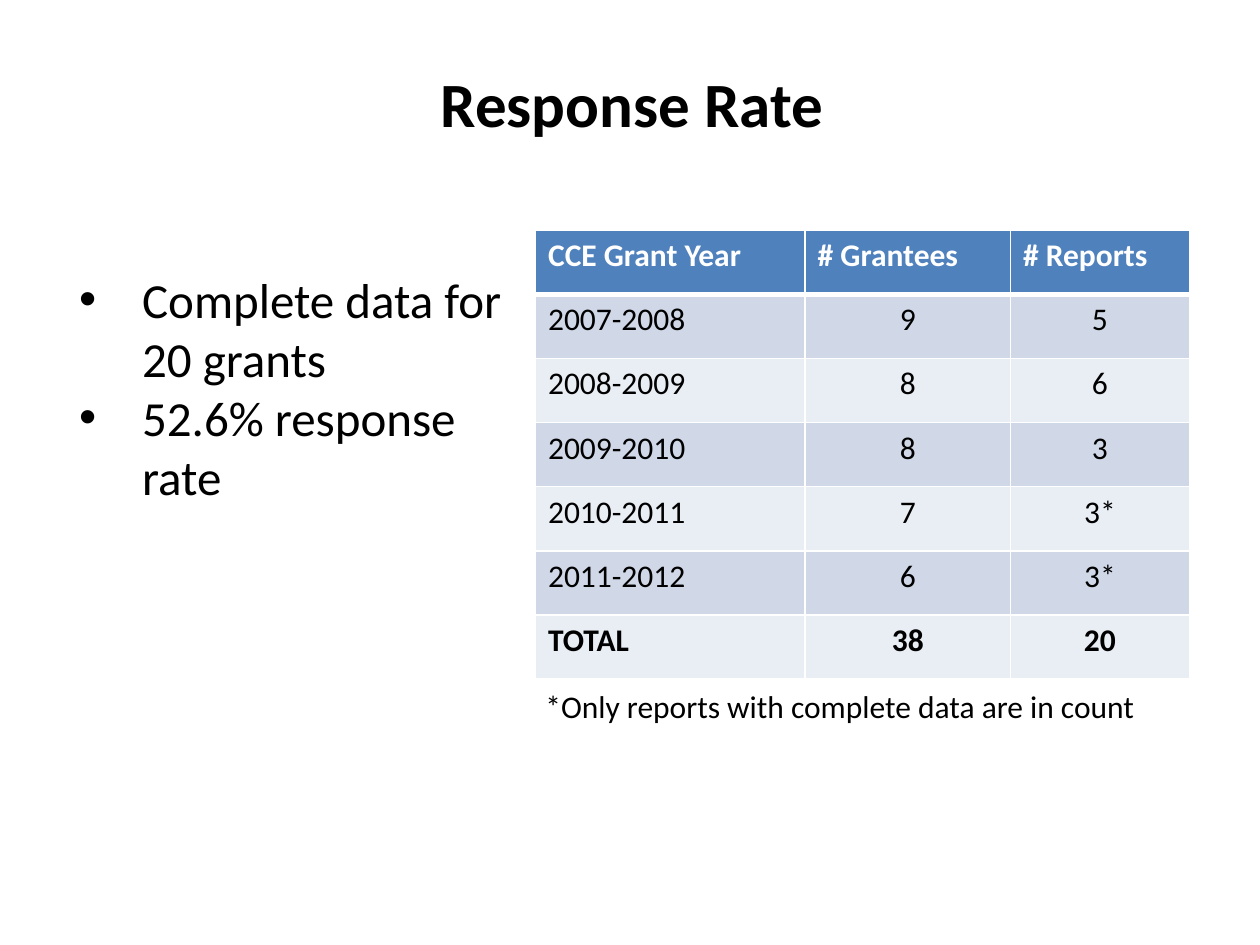
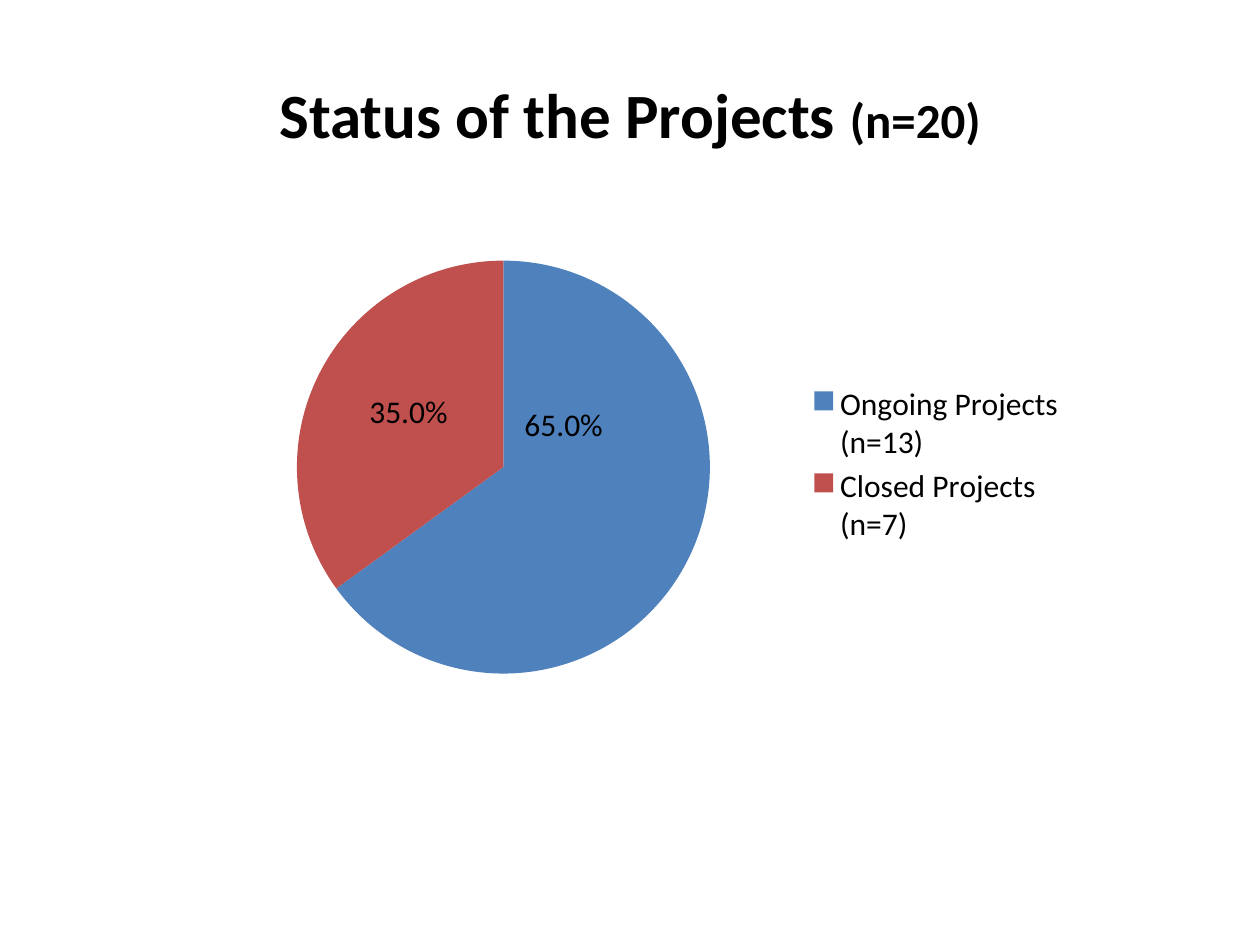
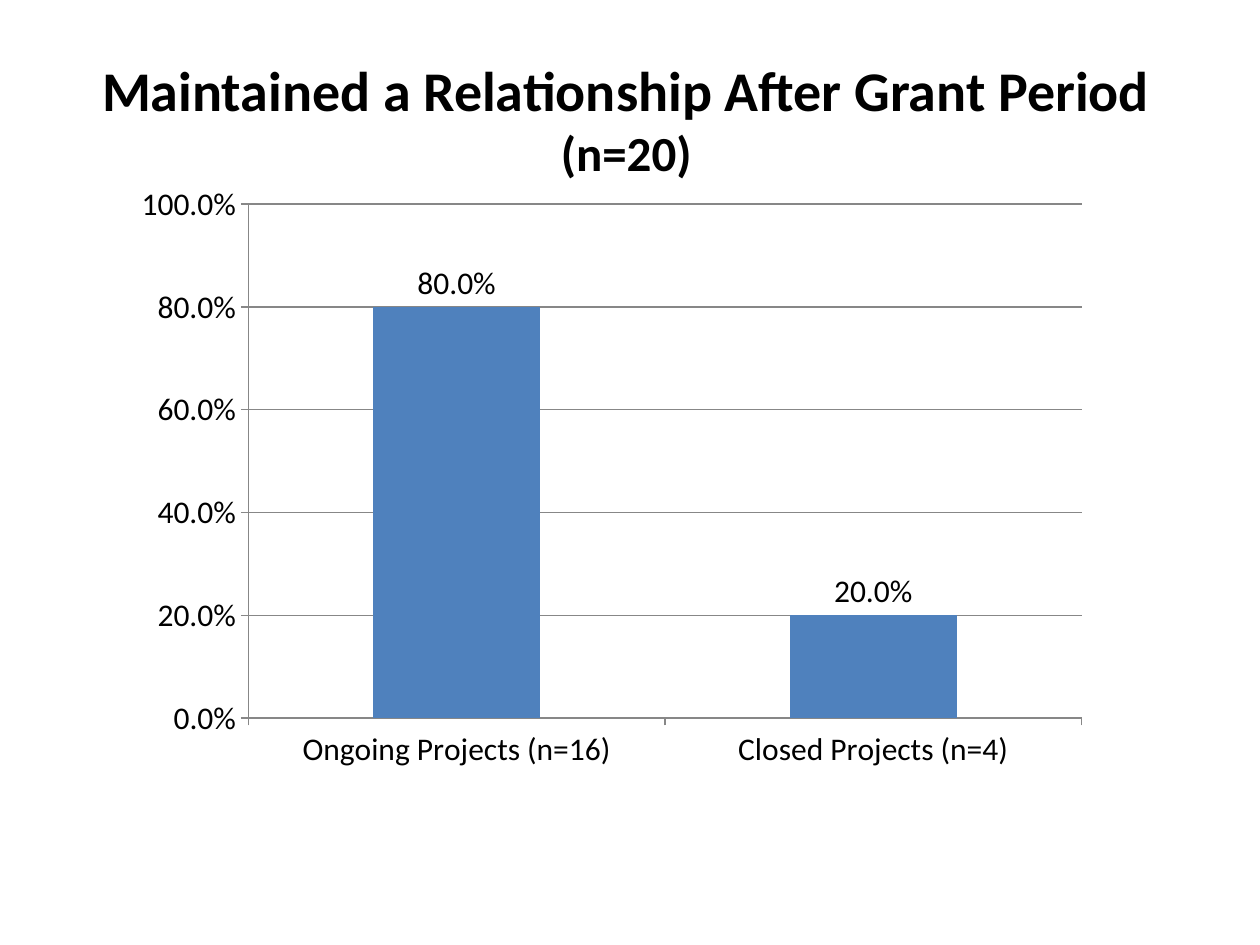
from lxml import etree
from pptx import Presentation
from pptx.chart.data import CategoryChartData
from pptx.dml.color import RGBColor
from pptx.enum.chart import XL_CHART_TYPE, XL_LABEL_POSITION, XL_LEGEND_POSITION, XL_TICK_MARK
from pptx.enum.text import MSO_ANCHOR, MSO_AUTO_SIZE, PP_ALIGN
from pptx.oxml.ns import qn
from pptx.util import Inches, Pt

PIE = XL_CHART_TYPE.PIE
COLUMN = XL_CHART_TYPE.COLUMN_CLUSTERED
INSIDE_END = XL_LABEL_POSITION.INSIDE_END
OUTSIDE_END = XL_LABEL_POSITION.OUTSIDE_END
RIGHT = XL_LEGEND_POSITION.RIGHT
TICK_OUT = XL_TICK_MARK.OUTSIDE
TOP = MSO_ANCHOR.TOP
NO_FIT = MSO_AUTO_SIZE.NONE
CENTER = PP_ALIGN.CENTER
LEFT = PP_ALIGN.LEFT

FONT = "Calibri"
BLACK, WHITE, GREY = "000000", "FFFFFF", "878787"
BLUE, RED = "4F81BD", "C0504D"
BANDS = ["E9EDF4", "D0D8E8"]
PERCENT = "0.0%"


def add_run(p, text, size, color=BLACK, bold=False):
    r = p.add_run()
    r.text = text
    r.font.name = FONT
    r.font.size = Pt(size)
    r.font.bold = bold
    r.font.color.rgb = RGBColor.from_string(color)


def set_layout(parent, index, **settings):
    for old in parent.findall(qn("c:layout")):
        parent.remove(old)
    layout = etree.Element(qn("c:layout"))
    manual = etree.SubElement(layout, qn("c:manualLayout"))
    for key, val in settings.items():
        etree.SubElement(manual, qn(f"c:{key}")).set("val", str(val))
    parent.insert(index, layout)


prs = Presentation()
prs.slide_width = Inches(10)
prs.slide_height = Inches(7.5)

titles = [
    ((0.38, 0.46, 9.27, 1.05), [("Response Rate", 36)]),
    ((0.75, 0.55, 8.5, 1.05), [("Status of the Projects ", 36), ("(n=20)", 28)]),
    ((0.34, 0.39, 9.26, 1.05), [("Maintained a Relationship After Grant Period ", 32), ("(n=20)", 28)]),
]
slides = []
for box, runs in titles:
    s = prs.slides.add_slide(prs.slide_layouts[5])
    slides.append(s)
    sp = s.shapes.title
    sp.left, sp.top, sp.width, sp.height = [Inches(v) for v in box]
    tf = sp.text_frame
    tf.auto_size = NO_FIT
    tf.word_wrap = True
    tf.vertical_anchor = TOP
    p = tf.paragraphs[0]
    p.alignment = CENTER
    for text, size in runs:
        add_run(p, text, size, bold=True)

response, status, relationship = slides

bodies = [
    ((0.53, 2.09, 3.59, 3.14), 28, True, ["Complete data for 20 grants", "52.6% response rate"]),
    ((4.23, 5.4, 5.21, 0.59), 18, False, ["*Only reports with complete data are in count"]),
]
for box, size, bulleted, lines in bodies:
    tf = response.shapes.add_textbox(*[Inches(v) for v in box]).text_frame
    tf.word_wrap = True
    for i, line in enumerate(lines):
        p = tf.add_paragraph() if i else tf.paragraphs[0]
        if bulleted:
            pPr = p._p.get_or_add_pPr()
            pPr.set("marL", str(Inches(0.5)))
            pPr.set("indent", str(-Inches(0.5)))
            etree.SubElement(pPr, qn("a:buFont")).set("typeface", "Arial")
            etree.SubElement(pPr, qn("a:buChar")).set("char", "•")
        add_run(p, line, size)

rows = [
    ("CCE Grant Year", "# Grantees", "# Reports"),
    ("2007-2008", "9", "5"),
    ("2008-2009", "8", "6"),
    ("2009-2010", "8", "3"),
    ("2010-2011", "7", "3*"),
    ("2011-2012", "6", "3*"),
    ("TOTAL", "38", "20"),
]
widths = [2.14, 1.63, 1.42]
table = response.shapes.add_table(
    len(rows), len(widths), Inches(4.25), Inches(1.83), Inches(sum(widths)), Inches(3.56)
).table
for col, width in zip(table.columns, widths):
    col.width = Inches(width)
for i, row in enumerate(rows):
    header = i == 0
    for j, text in enumerate(row):
        cell = table.cell(i, j)
        p = cell.text_frame.paragraphs[0]
        p.alignment = LEFT if header or j == 0 else CENTER
        add_run(p, text, 18, WHITE if header else BLACK, header or row[0] == "TOTAL")
        tcPr = cell._tc.get_or_add_tcPr()
        for side in ("lnL", "lnR", "lnT", "lnB"):
            thick = (header and side == "lnB") or (i == 1 and side == "lnT")
            ln = etree.SubElement(tcPr, qn(f"a:{side}"), w=str(Pt(3 if thick else 1)))
            fill = etree.SubElement(ln, qn("a:solidFill"))
            etree.SubElement(fill, qn("a:srgbClr"), val=WHITE)
        cell.fill.solid()
        cell.fill.fore_color.rgb = RGBColor.from_string(BLUE if header else BANDS[i % 2])

specs = [
    (status, PIE, (1.66, 1.44, 6.87, 4.49), (0.1, 0.14, 0.48, 0.73), INSIDE_END,
     [("Ongoing Projects (n=13)", 0.65), ("Closed Projects (n=7)", 0.35)]),
    (relationship, COLUMN, (0.96, 1.38, 7.78, 4.8), (0.13, 0.05, 0.85, 0.85), OUTSIDE_END,
     [("Ongoing Projects (n=16)", 0.8), ("Closed Projects (n=4)", 0.2)]),
]
charts = []
for s, kind, box, area, position, values in specs:
    data = CategoryChartData(number_format=PERCENT)
    data.categories = [name for name, _ in values]
    data.add_series("Series 1", [value for _, value in values])
    chart = s.shapes.add_chart(kind, *[Inches(v) for v in box], data).chart
    charts.append(chart)
    chart.has_title = False
    chart.has_legend = kind == PIE
    chart.font.name = FONT
    chart.font.size = Pt(18)
    chart.font.color.rgb = RGBColor.from_string(BLACK)
    plot = chart.plots[0]
    plot.vary_by_categories = kind == PIE
    labels = plot.series[0].data_labels
    labels.show_value = True
    labels.number_format = PERCENT
    labels.number_format_is_linked = False
    labels.position = position
    x, y, w, h = area
    set_layout(chart._chartSpace.chart.plotArea, 0, layoutTarget="inner",
               xMode="edge", yMode="edge", x=x, y=y, w=w, h=h)

pie, column = charts
pie.legend.position = RIGHT
pie.legend.include_in_layout = False
set_layout(pie.legend._element, 1, xMode="edge", yMode="edge", x=0.69, y=0.35, w=0.3, h=0.3)
series = pie.plots[0].series[0]
for i, (color, dx, dy) in enumerate([(BLUE, -0.09, -0.2), (RED, 0.05, 0.03)]):
    point = series.points[i]
    point.format.fill.solid()
    point.format.fill.fore_color.rgb = RGBColor.from_string(color)
    point.data_label.position = INSIDE_END
    dLbl = series.data_labels._element.findall(qn("c:dLbl"))[i]
    set_layout(dLbl, 1, x=dx, y=dy)
    dLbl.insert(2, etree.Element(qn("c:numFmt"), formatCode=PERCENT, sourceLinked="0"))

plot = column.plots[0]
plot.gap_width = 150
fill = plot.series[0].format.fill
fill.solid()
fill.fore_color.rgb = RGBColor.from_string(BLUE)
axis = column.value_axis
axis.minimum_scale = 0
axis.maximum_scale = 1
axis.major_unit = 0.2
axis.has_major_gridlines = True
axis.tick_labels.number_format = PERCENT
axis.tick_labels.number_format_is_linked = False
for ax in (axis, column.category_axis):
    ax.major_tick_mark = TICK_OUT
for item in (axis, column.category_axis, axis.major_gridlines):
    item.format.line.width = Pt(0.75)
    item.format.line.color.rgb = RGBColor.from_string(GREY)

prs.save("out.pptx")
